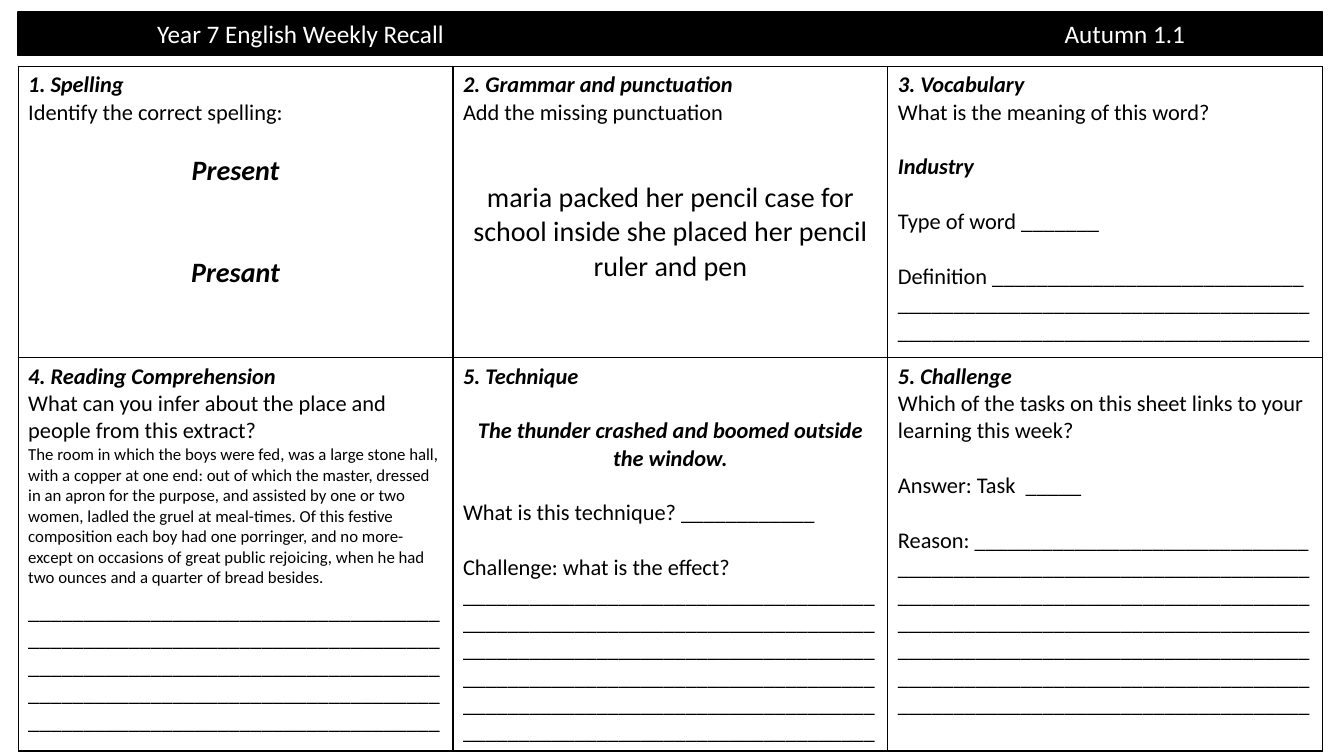
"""Build a one-page weekly English recall sheet with six task boxes."""
from dataclasses import dataclass

from lxml import etree
from pptx import Presentation
from pptx.dml.color import RGBColor
from pptx.enum.shapes import MSO_SHAPE
from pptx.enum.text import MSO_ANCHOR, PP_ALIGN
from pptx.oxml.ns import qn
from pptx.util import Inches, Pt

RECT = MSO_SHAPE.RECTANGLE
MIDDLE = MSO_ANCHOR.MIDDLE
LEFT, CENTER = PP_ALIGN.LEFT, PP_ALIGN.CENTER

COLORS = {"ink": "000000", "paper": "FFFFFF"}
FONT = "Calibri"
LINE_GAP = 19.5
RULE = "_" * 37


@dataclass
class Para:
    text: str
    size: int = 16
    strong: bool = False
    align: PP_ALIGN = LEFT
    before: float = 0


@dataclass
class Task:
    title: str
    body: list[Para]


EXTRACT = (
    "The room in which the boys were fed, was a large stone hall, with a copper at one end: "
    "out of which the master, dressed in an apron for the purpose, and assisted by one or two "
    "women, ladled the gruel at meal-times. Of this festive composition each boy had one "
    "porringer, and no more- except on occasions of great public rejoicing, when he had "
    "two ounces and a quarter of bread besides."
)

TASKS = [
    [
        Task("1. Spelling", [
            Para("Identify the correct spelling:"),
            Para("Present", 20, True, CENTER, LINE_GAP),
            Para("Presant", 20, True, CENTER, 2.5 * LINE_GAP),
        ]),
        Task("2. Grammar and punctuation", [
            Para("Add the missing punctuation"),
            Para("maria packed her pencil case for school inside she placed her pencil ruler and pen",
                 20, False, CENTER, 2 * LINE_GAP),
        ]),
        Task("3. Vocabulary", [
            Para("What is the meaning of this word?"),
            Para("Industry", strong=True, before=LINE_GAP),
            Para("Type of word " + "_" * 7, before=LINE_GAP),
            Para("Definition " + "_" * 28 + " " + RULE * 2, before=LINE_GAP),
        ]),
    ],
    [
        Task("4. Reading Comprehension", [
            Para("What can you infer about the place and people from this extract?"),
            Para(EXTRACT, 12),
            Para(RULE * 5, before=7),
        ]),
        Task("5. Technique", [
            Para("The thunder crashed and boomed outside the window.",
                 strong=True, align=CENTER, before=LINE_GAP),
            Para("What is this technique? " + "_" * 12, before=LINE_GAP),
            Para("Challenge: what is the effect? " + RULE * 6, before=LINE_GAP),
        ]),
        Task("5. Challenge", [
            Para("Which of the tasks on this sheet links to your learning this week?"),
            Para("Answer: Task  " + "_" * 5, before=LINE_GAP),
            Para("Reason: " + "_" * 30 + " " + RULE * 6, before=LINE_GAP),
        ]),
    ],
]


def color(name: str) -> RGBColor:
    return RGBColor.from_string(COLORS[name])


def write_para(p, para: Para, ink: str = "ink") -> None:
    p.text = para.text
    p.alignment = para.align
    p.space_before = Pt(para.before)
    for r in p.runs:
        r.font.name = FONT
        r.font.size = Pt(para.size)
        r.font.bold = r.font.italic = para.strong
        r.font.color.rgb = color(ink)


def draw_header(s) -> None:
    sp = s.shapes.add_shape(RECT, Inches(0.18), Inches(0.12), Inches(12.94), Inches(0.43))
    sp.shadow.inherit = False
    sp.fill.solid()
    sp.fill.fore_color.rgb = color("ink")
    sp.line.color.rgb = color("ink")
    sp.line.width = Pt(1)
    tf = sp.text_frame
    tf.word_wrap = True
    tf.vertical_anchor = MIDDLE
    tf.margin_left = Inches(1.38)
    p = tf.paragraphs[0]
    write_para(p, Para("Year 7 English Weekly Recall\tAutumn 1.1", 18), "paper")
    tabs = etree.SubElement(p._p.get_or_add_pPr(), qn("a:tabLst"))
    etree.SubElement(tabs, qn("a:tab"), pos=str(Inches(9)), algn="l")


def set_borders(cell) -> None:
    tc_pr = cell._tc.get_or_add_tcPr()
    for i, side in enumerate(("lnL", "lnR", "lnT", "lnB")):
        ln = etree.Element(qn(f"a:{side}"), w=str(Pt(1)))
        fill = etree.SubElement(ln, qn("a:solidFill"))
        etree.SubElement(fill, qn("a:srgbClr"), val=COLORS["ink"])
        tc_pr.insert(i, ln)


def fill_cell(cell, task: Task) -> None:
    cell.fill.background()
    set_borders(cell)
    tf = cell.text_frame
    write_para(tf.paragraphs[0], Para(task.title, strong=True))
    for para in task.body:
        write_para(tf.add_paragraph(), para)


def draw_tasks(s) -> None:
    table = s.shapes.add_table(
        2, 3, Inches(0.18), Inches(0.66), Inches(12.94), Inches(6.62)).table
    table.first_row = table.horz_banding = False
    for row, height in zip(table.rows, (2.89, 3.73)):
        row.height = Inches(height)
    for i, tasks in enumerate(TASKS):
        for j, task in enumerate(tasks):
            fill_cell(table.cell(i, j), task)


def main() -> None:
    prs = Presentation()
    prs.slide_width, prs.slide_height = Inches(13.33), Inches(7.5)
    s = prs.slides.add_slide(prs.slide_layouts[6])
    draw_header(s)
    draw_tasks(s)
    prs.save("out.pptx")


if __name__ == "__main__":
    main()
